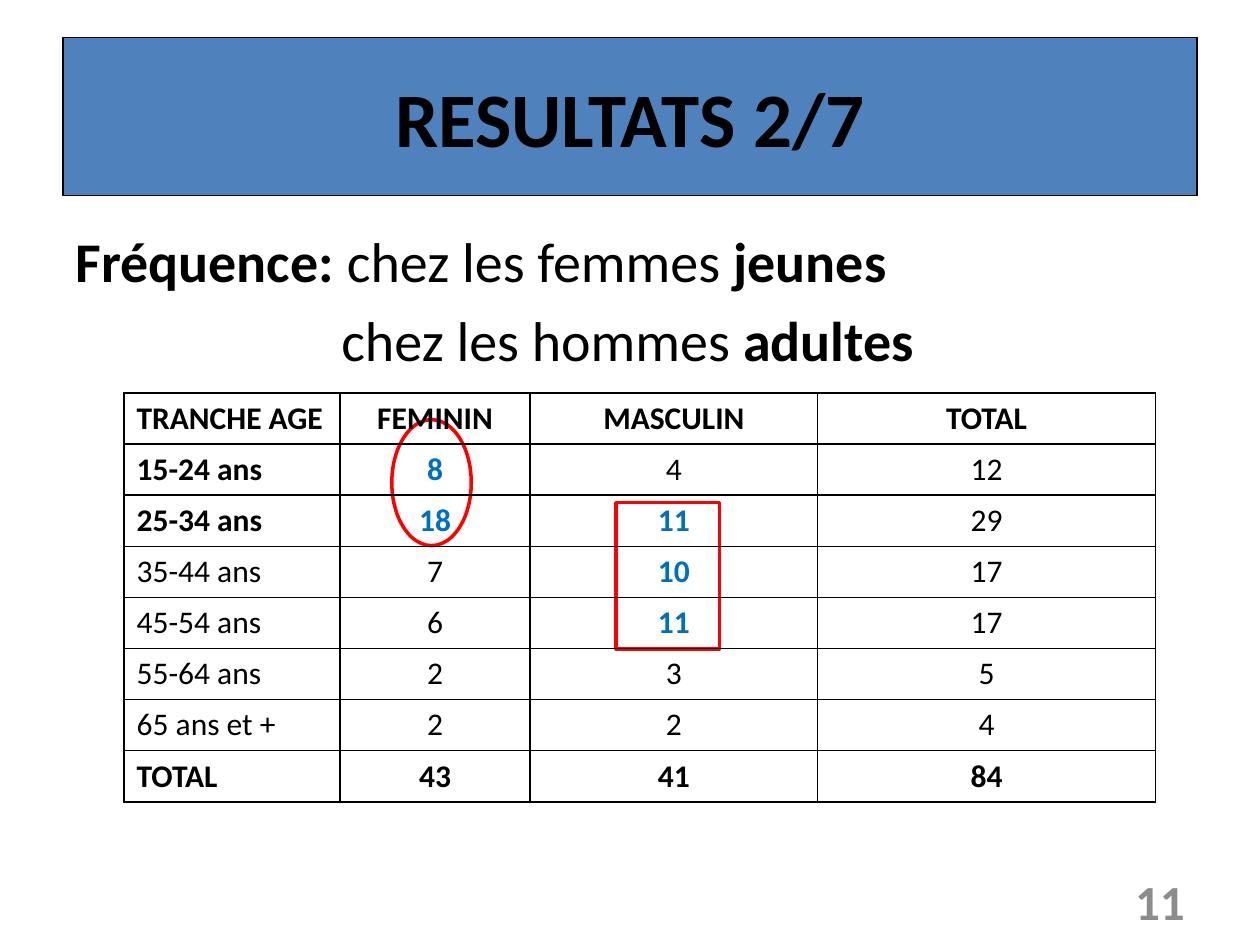
"""Build the slide of results by age group and sex."""
from typing import NamedTuple

import lxml.etree
import pptx
import pptx.dml.color
import pptx.enum.shapes
import pptx.enum.text
import pptx.oxml.ns
import pptx.util

Pt = pptx.util.Pt
ALIGN = pptx.enum.text.PP_ALIGN
ANCHOR = pptx.enum.text.MSO_ANCHOR
SHAPE = pptx.enum.shapes.MSO_SHAPE
BLACK, BLUE, RED = "000000", "0070C0", "FF0000"


class Highlight(NamedTuple):
    kind: SHAPE
    left: float
    top: float
    width: float
    height: float


HIGHLIGHTS = [
    Highlight(SHAPE.RECTANGLE, 352.1, 287.3, 59, 83.5),
    Highlight(SHAPE.OVAL, 223.9, 239.8, 45.4, 72),
]
ROWS = [
    ("TRANCHE AGE", "FEMININ", "MASCULIN", "TOTAL"),
    ("15-24 ans", "8", "4", "12"),
    ("25-34 ans", "18", "11", "29"),
    ("35-44 ans", "7", "10", "17"),
    ("45-54 ans", "6", "11", "17"),
    ("55-64 ans", "2", "3", "5"),
    ("65 ans et +", "2", "2", "4"),
    ("TOTAL", "43", "41", "84"),
]
COLUMN_WIDTHS = [123.4, 108.6, 164.4, 193]
ROW_HEIGHT = 29.2
BOLD_ROWS = {0, len(ROWS) - 1}
BOLD_LABELS = {1, 2}
BLUE_CELLS = {(1, 1), (2, 1), (2, 2), (3, 2), (4, 2)}


def color(value: str) -> pptx.dml.color.RGBColor:
    return pptx.dml.color.RGBColor.from_string(value)


def add_text(paragraph, text: str, *, size: float, bold: bool = False,
             fill: str = BLACK, align=ALIGN.LEFT) -> None:
    paragraph.alignment = align
    run = paragraph.add_run()
    run.text = text
    run.font.name = "Calibri"
    run.font.size = Pt(size)
    run.font.bold = bold
    run.font.color.rgb = color(fill)


def style_shape(shape, fill: str, line: str, width: float) -> None:
    shape.shadow.inherit = False
    shape.fill.solid()
    shape.fill.fore_color.rgb = color(fill)
    shape.line.color.rgb = color(line)
    shape.line.width = Pt(width)


def add_title(slide) -> None:
    title = slide.shapes.title
    title.left, title.top, title.width, title.height = map(Pt, (36, 21.6, 648, 90))
    style_shape(title, "4F81BD", BLACK, 0.75)
    title.text_frame.vertical_anchor = ANCHOR.MIDDLE
    add_text(title.text_frame.paragraphs[0], "RESULTATS 2/7", size=44, bold=True,
             align=ALIGN.CENTER)


def add_text_frame(slide, left: float, top: float, width: float, height: float):
    box = slide.shapes.add_textbox(Pt(left), Pt(top), Pt(width), Pt(height))
    box.text_frame.word_wrap = True
    return box.text_frame


def add_findings(slide) -> None:
    frame = add_text_frame(slide, 36, 126, 648, 356.4)
    first, second = frame.paragraphs[0], frame.add_paragraph()
    second._p.get_or_add_pPr().set("marL", str(Pt(152)))
    for paragraph, text, bold in (
        (first, "Fréquence: ", True),
        (first, "chez les femmes ", False),
        (first, "jeunes", True),
        (second, "chez les hommes ", False),
        (second, "adultes", True),
    ):
        paragraph.space_before = Pt(6.4)
        add_text(paragraph, text, size=32, bold=bold)


def add_highlight(slide, highlight: Highlight) -> None:
    kind, *box = highlight
    shape = slide.shapes.add_shape(kind, *map(Pt, box))
    style_shape(shape, "FFFFFF", RED, 2)


def add_borders(cell) -> None:
    properties = cell._tc.get_or_add_tcPr()
    qn = pptx.oxml.ns.qn
    for index, side in enumerate(("lnL", "lnR", "lnT", "lnB")):
        line = lxml.etree.Element(qn(f"a:{side}"), w=str(Pt(1)))
        fill = lxml.etree.SubElement(line, qn("a:solidFill"))
        lxml.etree.SubElement(fill, qn("a:srgbClr"), val=BLACK)
        properties.insert(index, line)


def add_age_table(slide) -> None:
    table = slide.shapes.add_table(
        len(ROWS), len(COLUMN_WIDTHS), Pt(70.9), Pt(224.6),
        Pt(sum(COLUMN_WIDTHS)), Pt(ROW_HEIGHT * len(ROWS))).table
    table.first_row = table.horz_banding = False
    for column, width in zip(table.columns, COLUMN_WIDTHS):
        column.width = Pt(width)
    for row_index, values in enumerate(ROWS):
        table.rows[row_index].height = Pt(ROW_HEIGHT)
        for column_index, value in enumerate(values):
            cell = table.cell(row_index, column_index)
            cell.fill.background()
            add_borders(cell)
            is_label = column_index == 0
            is_blue = (row_index, column_index) in BLUE_CELLS
            bold = (row_index in BOLD_ROWS or is_blue
                    or is_label and row_index in BOLD_LABELS)
            add_text(cell.text_frame.paragraphs[0], value, size=18, bold=bold,
                     fill=BLUE if is_blue else BLACK,
                     align=ALIGN.LEFT if is_label else ALIGN.CENTER)


def add_page_number(slide) -> None:
    frame = add_text_frame(slide, 516, 500.5, 168, 28.8)
    frame.vertical_anchor = ANCHOR.MIDDLE
    add_text(frame.paragraphs[0], "11", size=28, bold=True, fill="8C8C8C",
             align=ALIGN.RIGHT)


def main() -> None:
    presentation = pptx.Presentation()
    presentation.slide_width, presentation.slide_height = Pt(720), Pt(540)
    slide = presentation.slides.add_slide(presentation.slide_layouts[5])
    for highlight in HIGHLIGHTS:
        add_highlight(slide, highlight)
    add_title(slide)
    add_findings(slide)
    add_age_table(slide)
    add_page_number(slide)
    presentation.save("out.pptx")


if __name__ == "__main__":
    main()
